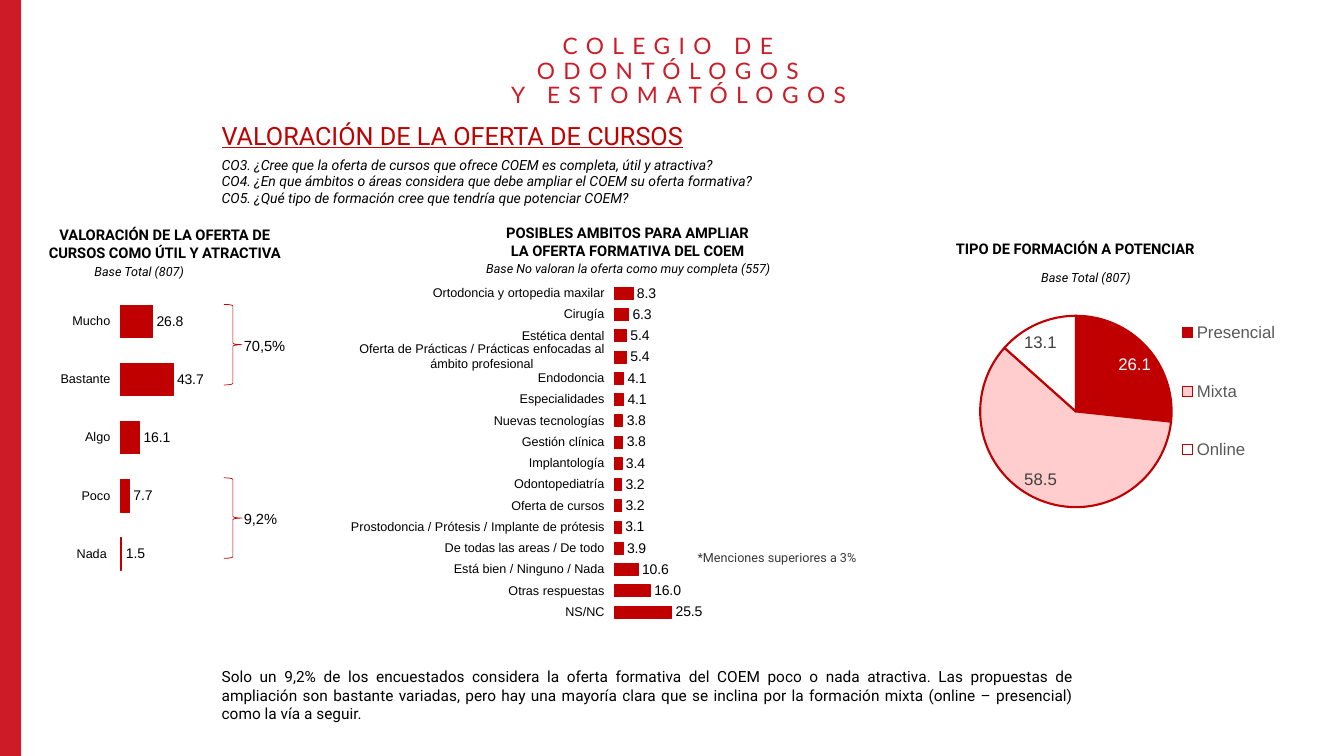
from dataclasses import dataclass

import lxml.etree
import pptx
import pptx.chart.data
import pptx.dml.color
import pptx.enum.chart
import pptx.enum.shapes
import pptx.enum.text
import pptx.oxml.ns
import pptx.util

Inches = pptx.util.Inches
Pt = pptx.util.Pt
Align = pptx.enum.text.PP_ALIGN
ChartType = pptx.enum.chart.XL_CHART_TYPE
LabelPosition = pptx.enum.chart.XL_LABEL_POSITION
Shape = pptx.enum.shapes.MSO_SHAPE
qn = pptx.oxml.ns.qn


@dataclass(frozen=True)
class Theme:
    band: str = "CD1C28"
    accent: str = "C00000"
    pale: str = "FFCDCD"
    white: str = "FFFFFF"
    ink: str = "000000"
    note: str = "3B3838"
    pie_label: str = "404040"
    legend: str = "595959"
    text_face: str = "Roboto"
    title_face: str = "Lato"
    chart_face: str = "Arial"
    heading: float = 18
    title: float = 16.2
    pie: float = 12
    body: float = 11
    panel: float = 10.5
    question: float = 10
    small: float = 9


def rgb(value):
    return pptx.dml.color.RGBColor.from_string(value)


def set_font(font, size, color, face, **flags):
    font.size = Pt(size)
    font.color.rgb = rgb(color)
    font.name = face
    for flag, value in flags.items():
        setattr(font, flag, value)


def set_layout(parent, index, left, top, width, height, inner=False):
    for old in parent.findall(qn("c:layout")):
        parent.remove(old)
    layout = lxml.etree.Element(qn("c:layout"))
    manual = lxml.etree.SubElement(layout, qn("c:manualLayout"))
    entries = [("xMode", "edge"), ("yMode", "edge"),
               ("x", left), ("y", top), ("w", width), ("h", height)]
    if inner:
        entries.insert(0, ("layoutTarget", "inner"))
    for tag, value in entries:
        lxml.etree.SubElement(manual, qn(f"c:{tag}")).set("val", str(value))
    parent.insert(index, layout)


def show_every_name(axis):
    element = axis._element
    skip = lxml.etree.Element(qn("c:tickLblSkip"))
    skip.set("val", "1")
    element.find(qn("c:noMultiLvlLbl")).addprevious(skip)
    body = element.find(qn("c:txPr")).find(qn("a:bodyPr"))
    body.set("rot", "0")
    body.set("vert", "horz")


class SlideBuilder:
    def __init__(self, slide, theme):
        self.slide = slide
        self.theme = theme

    def text(self, box, lines, size, align=Align.LEFT, color=None, face=None,
             line_spacing=None, tracking=None, middle=False, **flags):
        frame = self.slide.shapes.add_textbox(*map(Inches, box)).text_frame
        frame.word_wrap = True
        if middle:
            frame.vertical_anchor = pptx.enum.text.MSO_ANCHOR.MIDDLE
        for number, line in enumerate(lines):
            paragraph = frame.add_paragraph() if number else frame.paragraphs[0]
            paragraph.text = line
            paragraph.alignment = align
            if line_spacing:
                paragraph.line_spacing = line_spacing
            set_font(paragraph.font, size, color or self.theme.ink,
                     face or self.theme.text_face, **flags)
            if tracking:
                for run in paragraph.runs:
                    run._r.get_or_add_rPr().set("spc", str(tracking * 100))

    def panel_title(self, box, line):
        self.text(box, [line], self.theme.panel, Align.CENTER, bold=True)

    def base(self, box, line):
        self.text(box, [line], self.theme.small, Align.CENTER, italic=True)

    def band(self, box):
        band = self.slide.shapes.add_shape(Shape.RECTANGLE, *map(Inches, box))
        band.shadow.inherit = False
        band.fill.solid()
        band.fill.fore_color.rgb = rgb(self.theme.band)
        band.line.fill.background()

    def subtotal(self, top, value):
        brace = self.slide.shapes.add_shape(
            Shape.RIGHT_BRACE, Inches(2.22), Inches(top), Inches(0.18), Inches(0.8))
        brace.shadow.inherit = False
        brace.fill.background()
        brace.line.color.rgb = rgb(self.theme.accent)
        brace.line.width = Pt(0.5)
        self.text((2.32, top + 0.27, 0.73, 0.28), [value], self.theme.panel,
                  face=self.theme.chart_face)

    def chart(self, kind, box, plot_box, ratings):
        content = pptx.chart.data.CategoryChartData()
        content.categories = [name for name, _ in ratings]
        content.add_series("Series 1", [value for _, value in ratings])
        chart = self.slide.shapes.add_chart(kind, *map(Inches, box), content).chart
        chart.has_title = False
        chart.has_legend = False
        set_font(chart.font, self.theme.panel, self.theme.ink, self.theme.chart_face)
        set_layout(chart._chartSpace.chart.plotArea, 0, *plot_box, inner=True)
        return chart

    def labels(self, plot, size, color, position, number_format):
        plot.has_data_labels = True
        labels = plot.data_labels
        labels.show_value = True
        labels.number_format = number_format
        labels.number_format_is_linked = False
        labels.position = position
        set_font(labels.font, size, color, self.theme.chart_face)

    def bars(self, box, plot_box, ratings):
        theme = self.theme
        chart = self.chart(ChartType.BAR_CLUSTERED, box, plot_box, ratings)
        names = chart.category_axis
        names.reverse_order = True
        names.has_major_gridlines = False
        names.format.line.fill.background()
        set_font(names.tick_labels.font, theme.small, theme.ink, theme.chart_face)
        show_every_name(names)
        scale = chart.value_axis
        scale.minimum_scale, scale.maximum_scale, scale.major_unit = 0, 110, 10
        scale.has_major_gridlines = False
        scale.visible = False
        plot = chart.plots[0]
        plot.gap_width = 80
        plot.vary_by_categories = False
        self.fill(plot.series[0].format, theme.accent, 0.75)
        self.labels(plot, theme.question, theme.ink, LabelPosition.OUTSIDE_END, "#,##0.0")

    def fill(self, target, color, line_width):
        target.fill.solid()
        target.fill.fore_color.rgb = rgb(color)
        target.line.color.rgb = rgb(self.theme.accent)
        target.line.width = Pt(line_width)

    def pie(self, box, plot_box, legend_box, ratings):
        theme = self.theme
        chart = self.chart(ChartType.PIE, box, plot_box, ratings)
        plot = chart.plots[0]
        plot.vary_by_categories = True
        self.fill(plot.series[0].format, theme.accent, 1.5)
        points = plot.series[0].points
        for number, color in enumerate((theme.accent, theme.pale, theme.white)):
            self.fill(points[number].format, color, 1.5)
            label = points[number].data_label
            set_font(label.font, theme.pie, theme.pie_label if number else theme.white,
                     theme.chart_face)
            label.position = LabelPosition.BEST_FIT
        self.labels(plot, theme.pie, theme.pie_label, LabelPosition.BEST_FIT, "0.0")
        chart.has_legend = True
        chart.legend.position = pptx.enum.chart.XL_LEGEND_POSITION.RIGHT
        chart.legend.include_in_layout = False
        set_font(chart.legend.font, theme.pie, theme.legend, theme.chart_face)
        set_layout(chart.legend._element, 1, *legend_box)


def main():
    deck = pptx.Presentation()
    deck.slide_width, deck.slide_height = Inches(13.33), Inches(7.5)
    theme = Theme()
    page = SlideBuilder(deck.slides.add_slide(deck.slide_layouts[6]), theme)

    page.band((0, 0, 0.21, 7.5))
    page.text((2.1, 1.14, 8.44, 0.4), ["VALORACIÓN DE LA OFERTA DE CURSOS"],
              theme.heading, color=theme.accent, underline=True)
    page.text((4.55, 0.53, 4.23, 0.37), ["COLEGIO DE ODONTÓLOGOS\v Y ESTOMATÓLOGOS"],
              theme.title, Align.CENTER, theme.band, theme.title_face,
              line_spacing=0.9, tracking=6, middle=True)
    page.text((2.1, 1.5, 10.99, 0.61), [
        "CO3. ¿Cree que la oferta de cursos que ofrece COEM es completa, útil y atractiva?",
        "CO4. ¿En que ámbitos o áreas considera que debe ampliar el COEM su oferta formativa?",
        "CO5. ¿Qué tipo de formación cree que tendría que potenciar COEM?",
    ], theme.question, italic=True)

    page.panel_title((0.24, 2.19, 2.79, 0.45),
                     "VALORACIÓN DE LA OFERTA DE CURSOS COMO ÚTIL Y ATRACTIVA")
    page.base((0.48, 2.57, 1.8, 0.25), "Base Total (807)")
    page.bars((-1.77, 2.76, 4.51, 3.76), (0.657, 0.037, 0.293, 0.922), [
        ("Mucho", 26.8), ("Bastante", 43.7), ("Algo", 16.1), ("Poco", 7.7),
        ("Nada ", 1.5), ("", None)])
    page.subtotal(3.02, "70,5%")
    page.subtotal(4.74, "9,2%")

    page.panel_title((4.83, 2.17, 2.79, 0.45),
                     "POSIBLES AMBITOS PARA AMPLIAR\vLA OFERTA FORMATIVA DEL COEM")
    page.bars((3.43, 2.67, 5.36, 3.66), (0.497, 0.037, 0.458, 0.922), [
        ("Ortodoncia y ortopedia maxilar", 8.3), ("Cirugía", 6.3), ("Estética dental", 5.4),
        ("Oferta de Prácticas / Prácticas enfocadas al ámbito profesional", 5.4),
        ("Endodoncia", 4.1), ("Especialidades", 4.1), ("Nuevas tecnologías", 3.8),
        ("Gestión clínica", 3.8), ("Implantología", 3.4), ("Odontopediatría", 3.2),
        ("Oferta de cursos", 3.2), ("Prostodoncia / Prótesis / Implante de prótesis", 3.1),
        ("De todas las areas / De todo", 3.9), ("Está bien / Ninguno / Nada", 10.6),
        ("Otras respuestas", 16), ("NS/NC", 25.5)])
    page.base((4.49, 2.54, 3.48, 0.25), "Base No valoran la oferta como muy completa (557)")
    page.text((6.82, 5.41, 2.64, 0.25), ["*Menciones superiores a 3%"],
              theme.small, color=theme.note)

    page.panel_title((9.27, 2.33, 2.79, 0.28), "TIPO DE FORMACIÓN A POTENCIAR")
    page.pie((8.54, 2.81, 4.22, 2.68), (0.28, 0.12, 0.45, 0.71), (0.74, 0, 0.25, 0.8),
             [("Presencial", 26.1), ("Mixta", 58.5), ("Online", 13.1)])
    page.base((9.87, 2.63, 1.8, 0.25), "Base Total (807)")

    page.text((2.1, 6.57, 8.65, 0.66), [
        "Solo un 9,2% de los encuestados considera la oferta formativa del COEM poco o nada "
        "atractiva. Las propuestas de ampliación son bastante variadas, pero hay una mayoría "
        "clara que se inclina por la formación mixta (online – presencial) como la vía a seguir."
    ], theme.body, Align.JUSTIFY)

    deck.save("out.pptx")


if __name__ == "__main__":
    main()
